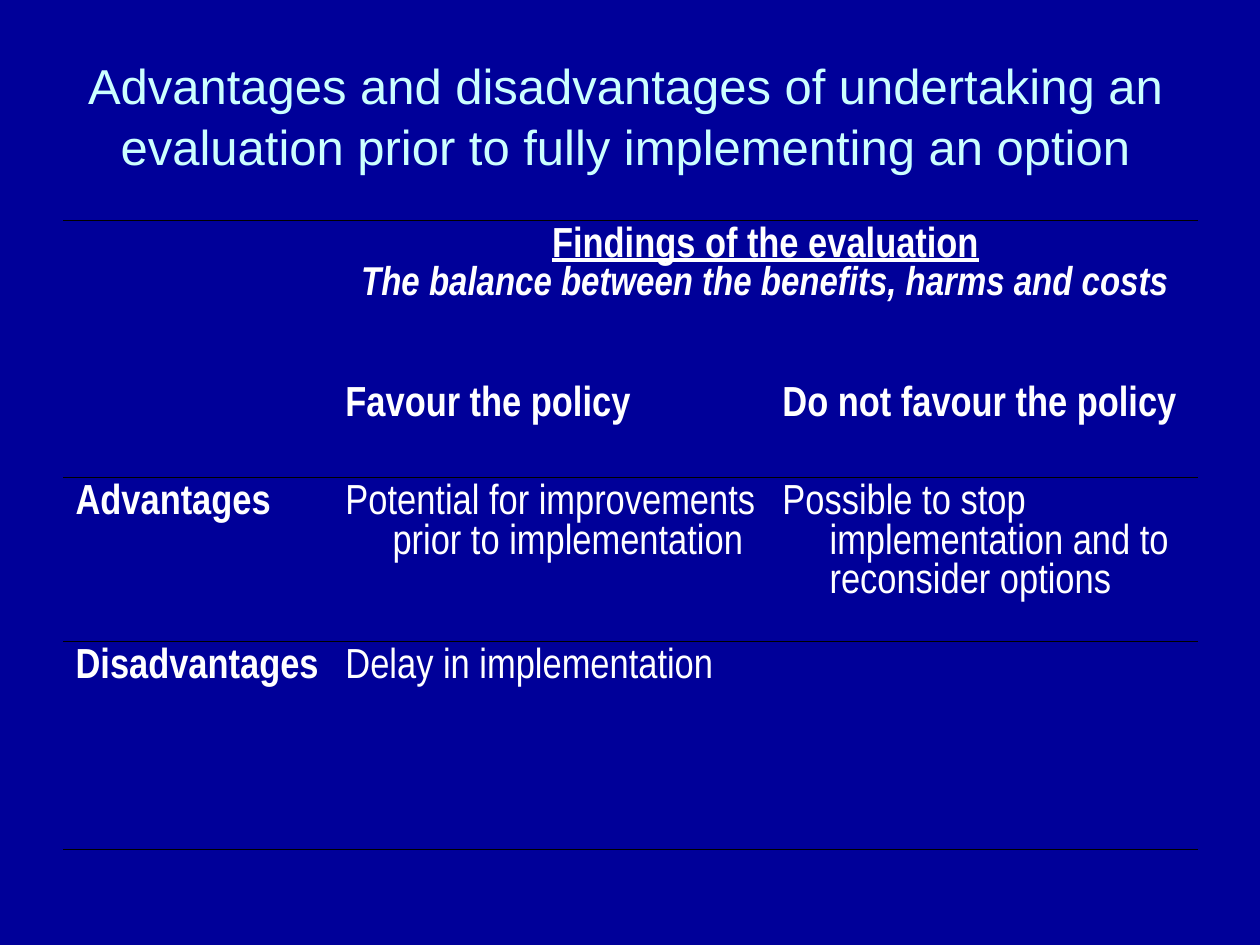
import pptx
import pptx.util
import pptx.dml.color
import pptx.enum.text
import pptx.oxml
import pptx.oxml.ns
from lxml import etree

Cm, Pt = pptx.util.Cm, pptx.util.Pt
RGBColor = pptx.dml.color.RGBColor
PP_ALIGN = pptx.enum.text.PP_ALIGN
qn = pptx.oxml.ns.qn

NAVY = RGBColor(0x00, 0x00, 0x99)
PALE_CYAN = RGBColor(0xCC, 0xFF, 0xFF)
WHITE = RGBColor(0xFF, 0xFF, 0xFF)
BLACK = RGBColor(0x00, 0x00, 0x00)

NO_STYLE = "{2D5ABB26-0587-4C30-8999-92F81FD0307C}"
HANGING = Cm(0.95)
COL_WIDTHS = [5.44, 8.81, 8.63]
ROW_HEIGHTS = [3.2, 1.98, 3.2, 4.19]

# Row, column, text, bold
BODY = [
    (1, 1, "Favour the policy", True),
    (1, 2, "Do not favour the policy", True),
    (2, 0, "Advantages", True),
    (2, 1, "Potential for improvements prior to implementation", False),
    (2, 2, "Possible to stop implementation and to reconsider options", False),
    (3, 0, "Disadvantages", True),
    (3, 1, "Delay in implementation", False),
]


def style_font(font, name, size, color, bold=False):
    font.name = name
    font.size = Pt(size)
    font.color.rgb = color
    font.bold = bold


def add_title(s, text):
    sp = s.shapes.add_textbox(Cm(0.3), Cm(0.71), Cm(24.61), Cm(3.18))
    tf = sp.text_frame
    tf.word_wrap = True
    tf.vertical_anchor = pptx.enum.text.MSO_ANCHOR.MIDDLE
    tf.text = text
    p = tf.paragraphs[0]
    p.alignment = PP_ALIGN.CENTER
    p.line_spacing = 1.05
    style_font(p.runs[0].font, "Arial", 28, PALE_CYAN)


def write_paragraph(p, text, bold, size=24):
    """Write one table paragraph with a hanging indent."""
    p.text = text
    pPr = p._p.get_or_add_pPr()
    pPr.set("marL", str(HANGING))
    pPr.set("indent", str(-HANGING))
    r = p.runs[0]
    style_font(r.font, "Arial Narrow", size, WHITE, bold)
    return r


def set_border(cell, side, color, width=1):
    ln = etree.Element(qn("a:" + side), w=str(Pt(width)))
    fill = etree.SubElement(ln, qn("a:solidFill"))
    etree.SubElement(fill, qn("a:srgbClr"), val=str(color))
    # Borders come before the fill, top before bottom
    tcPr = cell._tc.get_or_add_tcPr()
    tcPr.insert(len(tcPr.findall(qn("a:lnT"))), ln)


def add_table(s):
    rows, cols = len(ROW_HEIGHTS), len(COL_WIDTHS)
    frame = s.shapes.add_table(rows, cols, Cm(1.27), Cm(4.45),
                               Cm(sum(COL_WIDTHS)), Cm(sum(ROW_HEIGHTS)))
    table = frame.table
    table.first_row = table.horz_banding = False
    table._tbl.tblPr.find(qn("a:tableStyleId")).text = NO_STYLE
    for column, width in zip(table.columns, COL_WIDTHS):
        column.width = Cm(width)
    for row, height in zip(table.rows, ROW_HEIGHTS):
        row.height = Cm(height)

    # Rules above the table and below each row group
    for i in range(rows):
        for j in range(cols):
            cell = table.cell(i, j)
            cell.fill.background()
            if i in (0, 2, 3):
                set_border(cell, "lnT", BLACK)
            if i > 0:
                set_border(cell, "lnB", BLACK)

    table.cell(0, 0).merge(table.cell(1, 0))
    set_border(table.cell(0, 0), "lnB", BLACK)
    table.cell(0, 1).merge(table.cell(0, 2))
    return table


def fill_table(table):
    # Spanning heading
    tf = table.cell(0, 1).text_frame
    r = write_paragraph(tf.paragraphs[0], "Findings of the evaluation", True)
    r.font.underline = True
    r = write_paragraph(tf.add_paragraph(),
                        "The balance between the benefits, harms and costs",
                        True, 23)
    r.font.italic = True
    for p in tf.paragraphs:
        p.alignment = PP_ALIGN.CENTER

    # Column heads, row heads and entries
    for i, j, text, bold in BODY:
        write_paragraph(table.cell(i, j).text_frame.paragraphs[0], text, bold)


def main():
    prs = pptx.Presentation()
    prs.slide_width, prs.slide_height = Cm(25.4), Cm(19.05)
    s = prs.slides.add_slide(prs.slide_layouts[6])
    s.background.fill.solid()
    s.background.fill.fore_color.rgb = NAVY

    add_title(s, "Advantages and disadvantages of undertaking an "
                 "evaluation prior to fully implementing an option")
    fill_table(add_table(s))
    prs.save("out.pptx")


if __name__ == "__main__":
    main()
